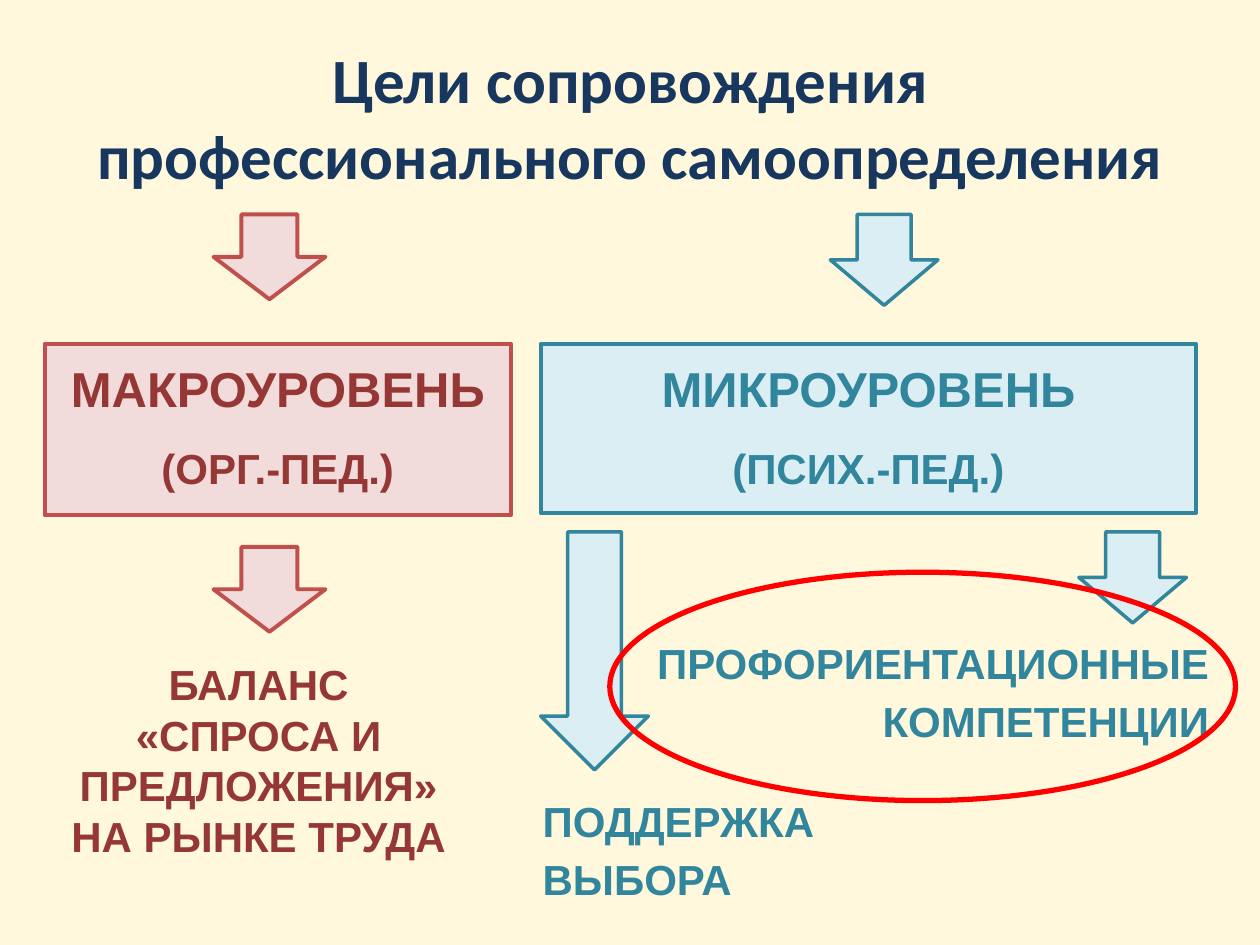
import pptx
import pptx.util
import pptx.dml.color
import pptx.enum.shapes
import pptx.enum.text

Pt = pptx.util.Pt
Shape = pptx.enum.shapes.MSO_SHAPE
Align = pptx.enum.text.PP_ALIGN
Anchor = pptx.enum.text.MSO_ANCHOR

# Each level: fill, line, text colour, line width of its arrows
MACRO = ("F2DCDB", "C0504D", "953735", 2.25)
MICRO = ("DBEEF4", "31859C", "31859C", 2)


def color(code):
    return pptx.dml.color.RGBColor.from_string(code)


def style(run, font, size, code):
    run.font.name = font
    run.font.size = Pt(size)
    run.font.bold = True
    run.font.color.rgb = color(code)


def write(frame, lines, code, align, spaced=True):
    """Fill a frame with (text, size) paragraphs."""
    frame.word_wrap = True
    frame.vertical_anchor = Anchor.TOP
    frame.text = "\n".join(text for text, size in lines)
    for para, (text, size) in zip(frame.paragraphs, lines):
        para.alignment = align
        if spaced:
            para.line_spacing = 1.15
            para.space_after = Pt(10)
        style(para.runs[0], "Arial", size, code)


def draw(slide, kind, box, fill, line, width):
    shape = slide.shapes.add_shape(kind, *map(Pt, box))
    shape.shadow.inherit = False
    if fill:
        shape.fill.solid()
        shape.fill.fore_color.rgb = color(fill)
    else:
        shape.fill.background()
    shape.line.color.rgb = color(line)
    shape.line.width = Pt(width)
    return shape


def arrow(slide, box, theme):
    fill, line, ink, width = theme
    draw(slide, Shape.DOWN_ARROW, box, fill, line, width)


def panel(slide, box, theme, head, note):
    fill, line, ink, width = theme
    shape = draw(slide, Shape.RECTANGLE, box, fill, line, 2.25)
    write(shape.text_frame, [(head, 28), (note, 24)], ink, Align.CENTER)


def label(slide, box, theme, lines, align, spaced=True):
    frame = slide.shapes.add_textbox(*map(Pt, box)).text_frame
    write(frame, [(text, 24) for text in lines], theme[2], align, spaced)


def title(slide, box, text):
    shape = slide.shapes.title
    shape.left, shape.top, shape.width, shape.height = map(Pt, box)
    frame = shape.text_frame
    frame.text = text
    frame.word_wrap = True
    frame.vertical_anchor = Anchor.MIDDLE
    frame.paragraphs[0].alignment = Align.CENTER
    style(frame.paragraphs[0].runs[0], "Calibri", 36, "17375E")


def macro(slide, x, y, w, h):
    # Arrows above and below the panel
    for top in (y, y + 190):
        arrow(slide, (x + 96.5, top, 64, 48.5), MACRO)
    panel(slide, (x, y + 74, w, 98), MACRO, "МАКРОУРОВЕНЬ", "(ОРГ.-ПЕД.)")
    # Goal
    label(slide, (x, y + 250.5, w - 22, h - 250.5), MACRO,
          ["БАЛАНС", "«СПРОСА И ПРЕДЛОЖЕНИЯ» НА РЫНКЕ ТРУДА"],
          Align.CENTER, spaced=False)


def micro(slide, x, y, w, h):
    # Arrow above, panel, long and short arrows below
    arrow(slide, (x + 165.5, y, 61.5, 52), MICRO)
    panel(slide, (x, y + 74, w, 96.5), MICRO, "МИКРОУРОВЕНЬ", "(ПСИХ.-ПЕД.)")
    arrow(slide, (x, y + 181.5, 61.5, 136), MICRO)
    arrow(slide, (x + w - 67, y + 181.5, 61.5, 52), MICRO)
    # Goals
    label(slide, (x - 6, y + 324.5, 170, h - 324.5), MICRO,
          ["ПОДДЕРЖКА ВЫБОРА"], Align.LEFT)
    label(slide, (x + 51, y + 234, 338, 67), MICRO,
          ["ПРОФОРИЕНТАЦИОННЫЕ КОМПЕТЕНЦИИ"], Align.RIGHT)
    # Highlight ring
    draw(slide, Shape.OVAL, (x + 39.5, y + 204.5, 357.5, 130.5),
         None, "FF0000", 3)


def main():
    deck = pptx.Presentation()
    deck.slide_width, deck.slide_height = Pt(720), Pt(540)
    slide = deck.slides.add_slide(deck.slide_layouts[5])
    slide.background.fill.solid()
    slide.background.fill.fore_color.rgb = color("FFF8DD")
    title(slide, (36, 21.5, 648, 90),
          "Цели сопровождения профессионального самоопределения")
    macro(slide, 25.5, 122.5, 266.5, 317.5)
    micro(slide, 309, 122.5, 374.5, 391.5)
    deck.save("out.pptx")


if __name__ == "__main__":
    main()
